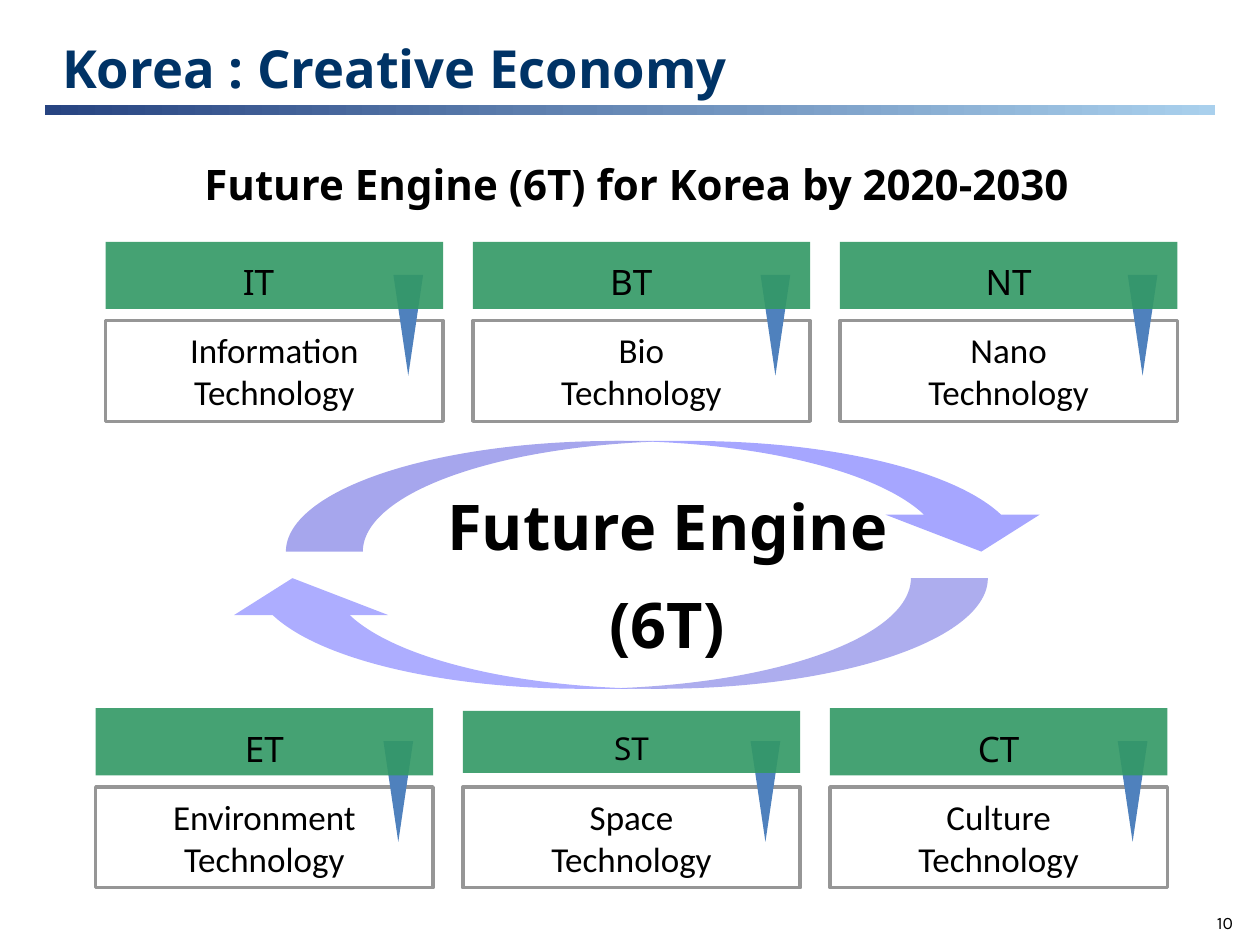
import pptx
import pptx.util
import pptx.dml.color
import pptx.enum.shapes
import pptx.enum.text
import pptx.oxml.ns
import lxml.etree

Pt = pptx.util.Pt
Shapes = pptx.enum.shapes.MSO_SHAPE
Align = pptx.enum.text.PP_ALIGN
Anchor = pptx.enum.text.MSO_ANCHOR

THEME = {
    "colors": {
        "title": "003366", "text": "000000", "bar_start": "274481",
        "bar_end": "A9D0ED", "arrow": "0000FF", "label": "339966",
        "pointer": "4F81BD", "border": "969696",
    },
    "sizes": {"title": 30, "subtitle": 24, "center": 36, "card": 20, "small": 18, "number": 10},
    "fonts": {"heading": "Noto Sans", "body": "Calibri", "number": "Karla"},
}


def add_block(kind, left, top, width, height, fill=None, opacity=100):
    shape = slide.shapes.add_shape(kind, Pt(left), Pt(top), Pt(width), Pt(height))
    shape.shadow.inherit = False
    shape.line.fill.background()
    if fill is None:
        shape.fill.background()
        return shape
    shape.fill.solid()
    shape.fill.fore_color.rgb = pptx.dml.color.RGBColor.from_string(THEME["colors"][fill])
    if opacity < 100:
        color = shape.fill._xPr.find(".//" + pptx.oxml.ns.qn("a:srgbClr"))
        alpha = lxml.etree.SubElement(color, pptx.oxml.ns.qn("a:alpha"))
        alpha.set("val", str(opacity * 1000))
    return shape


def write_text(shape, lines, size, font="heading", color="text", bold=False,
               align=Align.CENTER, anchor=Anchor.MIDDLE, spacing=None, wrap=True):
    frame = shape.text_frame
    frame.word_wrap = wrap
    frame.vertical_anchor = anchor
    frame.text = "\n".join(lines)
    for paragraph in frame.paragraphs:
        paragraph.alignment = align
        paragraph.line_spacing = spacing
        paragraph.font.name = THEME["fonts"][font]
        paragraph.font.size = Pt(THEME["sizes"][size])
        paragraph.font.bold = bold
        paragraph.font.color.rgb = pptx.dml.color.RGBColor.from_string(THEME["colors"][color])


presentation = pptx.Presentation()
presentation.slide_width = Pt(720)
presentation.slide_height = Pt(540)
slide = presentation.slides.add_slide(presentation.slide_layouts[6])

number = slide.shapes.add_textbox(Pt(688.3), Pt(514), Pt(27.4), Pt(23))
write_text(number, ["10"], "number", font="number", align=Align.LEFT,
           anchor=Anchor.TOP, spacing=1.3, wrap=False)

bar = add_block(Shapes.RECTANGLE, 25.5, 60.3, 669, 5.5)
bar.fill.gradient()
bar.fill.gradient_angle = 0
for stop, name in zip(bar.fill.gradient_stops, ("bar_start", "bar_end")):
    stop.color.rgb = pptx.dml.color.RGBColor.from_string(THEME["colors"][name])

for left, top, rotation, opacity in ((163.4, 252, 0, 35), (123.1, 330.4, 180, 32)):
    arrow = add_block(Shapes.CURVED_DOWN_ARROW, left, top, 441.4, 63.2, "arrow", opacity)
    arrow.rotation = rotation
    for index, value in enumerate((0.696, 1.392, 0.333)):
        arrow.adjustments[index] = value

title = slide.shapes.add_textbox(Pt(28.4), Pt(16), Pt(664), Pt(44.6))
write_text(title, ["Korea : Creative Economy"], "title", color="title", bold=True, align=Align.LEFT)

rows = (
    (60.4, 138.2, (
        ("IT\t", ["Information Technology"], "card", 38.4),
        ("BT\t", ["Bio", "Technology"], "card", 38.4),
        ("NT", ["Nano", "Technology"], "card", 38.4),
    )),
    (54.7, 404.7, (
        ("ET", ["Environment", "Technology"], "card", 38.4),
        ("ST", ["Space", "Technology"], "small", 35.4),
        ("CT", ["Culture", "Technology"], "card", 38.4),
    )),
)
for row_left, top, cards in rows:
    for column, (label, details, label_size, label_height) in enumerate(cards):
        left = row_left + 209.8 * column
        detail = add_block(Shapes.RECTANGLE, left, top + 45, 192.8, 57.6)
        detail.line.color.rgb = pptx.dml.color.RGBColor.from_string(THEME["colors"]["border"])
        detail.line.width = Pt(2)
        write_text(detail, details, "card", font="body")

        pointer = add_block(Shapes.ISOSCELES_TRIANGLE, left + 164.4, top + 18.8, 17, 57.6, "pointer")
        pointer.rotation = 180

        label_top = top + (38.4 - label_height) / 2
        header = add_block(Shapes.RECTANGLE, left, label_top, 192.8, label_height, "label", 91)
        write_text(header, [label], label_size, spacing=1.3)

center = slide.shapes.add_textbox(Pt(219.6), Pt(290.9), Pt(323.3), Pt(61.9))
write_text(center, ["Future Engine (6T)"], "center", bold=True, spacing=1.3)

subtitle = slide.shapes.add_textbox(Pt(54.7), Pt(87.1), Pt(617.8), Pt(36))
write_text(subtitle, ["Future Engine (6T) for Korea by 2020-2030"], "subtitle", bold=True, anchor=Anchor.TOP)

presentation.save("out.pptx")
